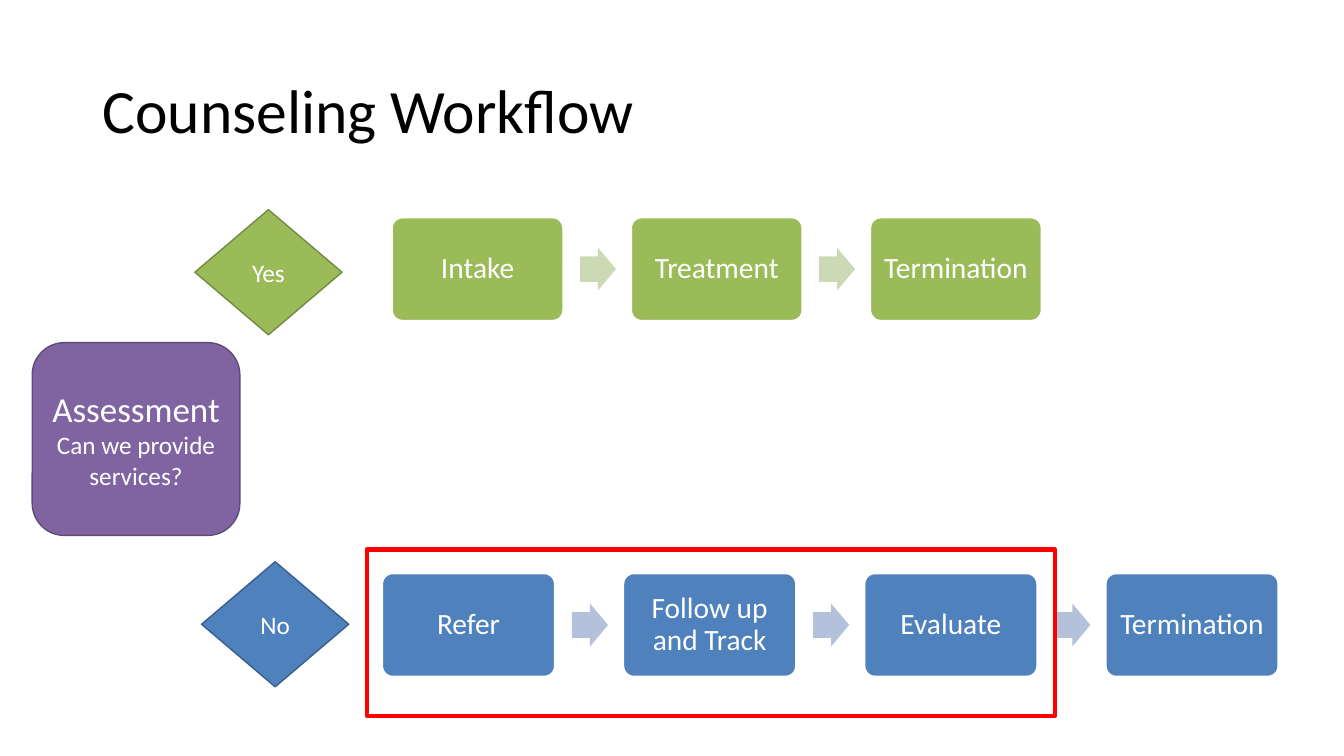
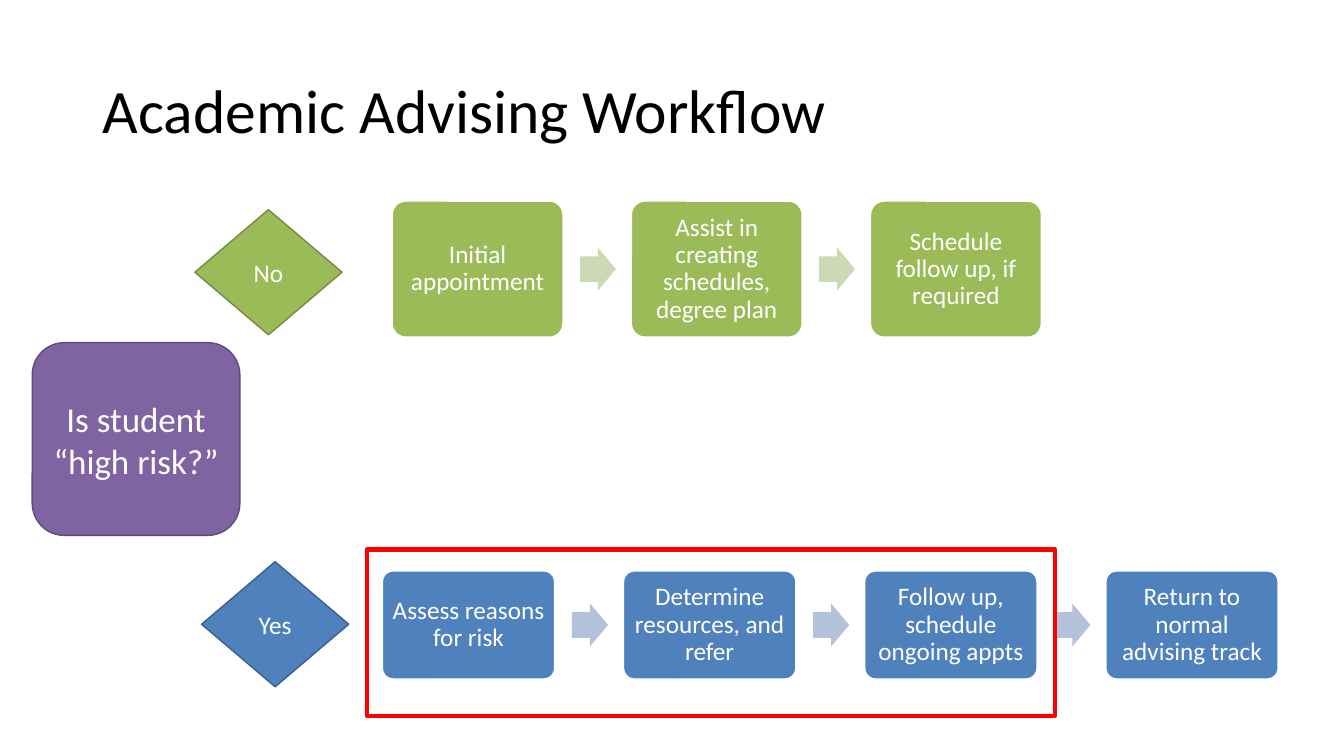
from collections import namedtuple

from pptx import Presentation
from pptx import util as u
from pptx.dml.color import RGBColor
from pptx.enum import shapes, text

FONT = "Calibri"
BLACK = RGBColor(0x00, 0x00, 0x00)
WHITE = RGBColor(0xFF, 0xFF, 0xFF)
RED = RGBColor(0xFF, 0x00, 0x00)
PURPLE = RGBColor(0x80, 0x64, 0xA2)
DARK_PURPLE = RGBColor(0x5F, 0x4A, 0x78)

Palette = namedtuple("Palette", "fill outline arrow")
GREEN = Palette(RGBColor(0x9B, 0xBB, 0x59), RGBColor(0x73, 0x8A, 0x42),
                RGBColor(0xCB, 0xDA, 0xB5))
BLUE = Palette(RGBColor(0x4F, 0x81, 0xBD), RGBColor(0x3A, 0x5F, 0x8C),
               RGBColor(0xB3, 0xC1, 0xDB))

WIDTH, HEIGHT = u.Inches(13.333), u.Inches(7.5)
INSET = u.Inches(0.07)

# Regions, in percent of the slide's width and height
Box = namedtuple("Box", "left top width height")
TITLE = Box(6.9, 5.3, 86.25, 19.35)
QUESTION = Box(2.4, 45.33, 15.45, 25.5)
UPPER_ANSWER = Box(14.5, 27.73, 10.95, 16.55)
LOWER_ANSWER = Box(15, 74.3, 10.95, 16.55)
UPPER_ROW = Box(29.18, 26.6, 48.3, 18)
LOWER_ROW = Box(28.45, 75.52, 66.65, 14.3)
FRAME = Box(27.3, 72.7, 51.2, 22)

# Parts of a step row, in widths of one step
GAP = 0.4
ARROW_OFFSET, ARROW_WIDTH, ARROW_HEIGHT = 1.1, 0.21, 0.25


def place(box):
    """Turn a box in percent into slide lengths."""
    return (round(WIDTH * box.left / 100), round(HEIGHT * box.top / 100),
            round(WIDTH * box.width / 100), round(HEIGHT * box.height / 100))


def write(shape, lines, size=18, color=WHITE, align=text.PP_ALIGN.CENTER,
          spacing=1.0, inset=INSET):
    """Write lines into a shape; a line is a string or (string, size)."""
    frame = shape.text_frame
    frame.word_wrap = True
    frame.vertical_anchor = text.MSO_ANCHOR.MIDDLE
    frame.margin_left = frame.margin_right = inset
    frame.margin_top = frame.margin_bottom = u.Inches(0.05)
    for index, line in enumerate(lines):
        words, points = line if isinstance(line, tuple) else (line, size)
        paragraph = frame.add_paragraph() if index else frame.paragraphs[0]
        paragraph.alignment = align
        paragraph.line_spacing = spacing
        run = paragraph.add_run()
        run.text = words
        run.font.name = FONT
        run.font.size = u.Pt(points)
        run.font.color.rgb = color


def add_figure(slide, kind, bounds, fill=None, line=None, weight=1,
               adjustments=()):
    shape = slide.shapes.add_shape(kind, *bounds)
    shape.shadow.inherit = False
    for index, value in enumerate(adjustments):
        shape.adjustments[index] = value
    if fill is None:
        shape.fill.background()
    else:
        shape.fill.solid()
        shape.fill.fore_color.rgb = fill
    if line is None:
        shape.line.fill.background()
    else:
        shape.line.color.rgb = line
        shape.line.width = u.Pt(weight)
    return shape


def add_title(slide, box, words):
    shape = slide.shapes.add_textbox(*place(box))
    write(shape, [words], size=44, color=BLACK, align=text.PP_ALIGN.LEFT,
          spacing=0.9, inset=u.Inches(0.1))


def add_question(slide, box, lines):
    shape = add_figure(slide, shapes.MSO_SHAPE.ROUNDED_RECTANGLE, place(box),
                       PURPLE, DARK_PURPLE)
    write(shape, lines, size=25)


def add_answer(slide, box, word, palette):
    shape = add_figure(slide, shapes.MSO_SHAPE.FLOWCHART_DECISION, place(box),
                       palette.fill, palette.outline)
    write(shape, [word])


def add_step_row(slide, box, steps, palette, size, height):
    """Spread steps evenly over the box, with an arrow in each gap."""
    left, top, width, full_height = place(box)
    middle = top + full_height / 2
    step_width = width / (len(steps) + GAP * (len(steps) - 1))
    step_height = HEIGHT * height / 100
    arrow_height = step_width * ARROW_HEIGHT

    for index, step in enumerate(steps):
        x = left + index * step_width * (1 + GAP)
        bounds = map(round, (x, middle - step_height / 2,
                             step_width, step_height))
        shape = add_figure(slide, shapes.MSO_SHAPE.ROUNDED_RECTANGLE, bounds,
                           palette.fill, WHITE, adjustments=[0.1])
        write(shape, [step], size=size, spacing=0.9)
        if index < len(steps) - 1:
            bounds = map(round, (x + step_width * ARROW_OFFSET,
                                 middle - arrow_height / 2,
                                 step_width * ARROW_WIDTH, arrow_height))
            add_figure(slide, shapes.MSO_SHAPE.RIGHT_ARROW, bounds,
                       palette.arrow, adjustments=[0.6, 0.5])


def add_workflow(presentation, title, question, answers, upper_steps,
                 lower_steps, step_size, step_heights):
    slide = presentation.slides.add_slide(presentation.slide_layouts[6])
    add_title(slide, TITLE, title)
    add_question(slide, QUESTION, question)
    # Two branches
    add_step_row(slide, UPPER_ROW, upper_steps, GREEN, step_size,
                 step_heights[0])
    add_step_row(slide, LOWER_ROW, lower_steps, BLUE, step_size,
                 step_heights[1])
    add_answer(slide, UPPER_ANSWER, answers[0], GREEN)
    add_answer(slide, LOWER_ANSWER, answers[1], BLUE)
    # Highlight around the first three lower steps
    add_figure(slide, shapes.MSO_SHAPE.RECTANGLE, place(FRAME), line=RED,
               weight=3)


def main():
    presentation = Presentation()
    presentation.slide_width, presentation.slide_height = WIDTH, HEIGHT
    add_workflow(
        presentation, "Counseling Workflow",
        question=["Assessment", ("Can we provide services?", 18)],
        answers=["Yes", "No"],
        upper_steps=["Intake", "Treatment", "Termination"],
        lower_steps=["Refer", "Follow up and Track", "Evaluate",
                     "Termination"],
        step_size=21, step_heights=(13.6, 13.6))
    add_workflow(
        presentation, "Academic Advising Workflow",
        question=["Is student “high risk?”"],
        answers=["No", "Yes"],
        upper_steps=["Initial appointment",
                     "Assist in creating schedules, degree plan",
                     "Schedule follow up, if required"],
        lower_steps=["Assess reasons for risk",
                     "Determine resources, and refer",
                     "Follow up, schedule ongoing appts",
                     "Return to normal advising track"],
        step_size=18, step_heights=(18, 14.3))
    presentation.save("out.pptx")


if __name__ == "__main__":
    main()
